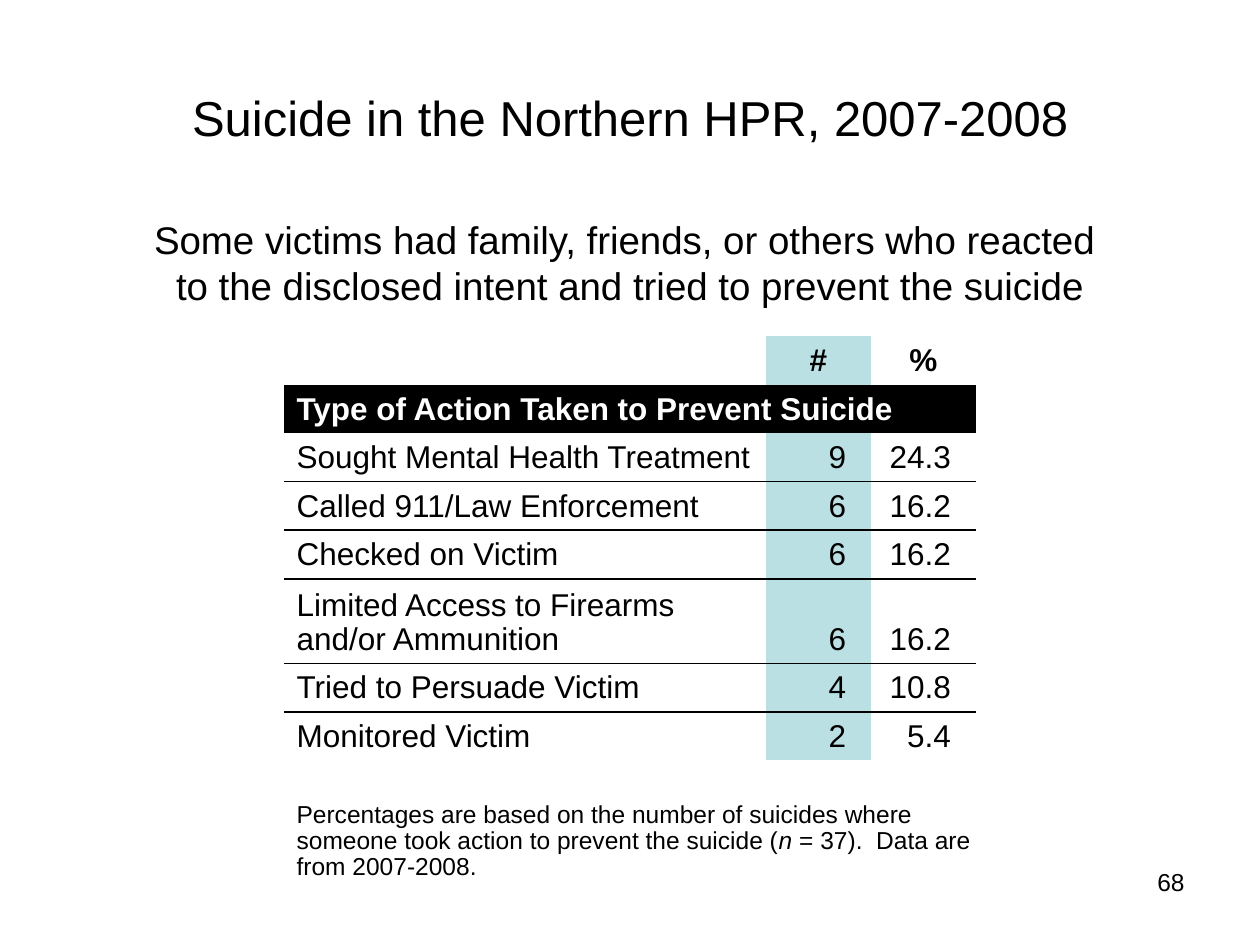
from lxml import etree
from pptx import Presentation
from pptx import util as u
from pptx.dml.color import RGBColor
from pptx.enum import text
from pptx.oxml.ns import qn

PX = 914400 // 126
BLACK, WHITE, TEAL = "000000", "FFFFFF", "BBE0E3"
LEFT, MID, RIGHT = text.PP_ALIGN.LEFT, text.PP_ALIGN.CENTER, text.PP_ALIGN.RIGHT
TOP, CENTER = text.MSO_ANCHOR.TOP, text.MSO_ANCHOR.MIDDLE

# Content: box, size, alignment, anchor, lines
TEXTS = [
    ((63, 38, 1134, 158), 28, MID, CENTER, ["Suicide in the Northern HPR, 2007-2008"]),
    ((105, 210, 1050, 105), 22, MID, TOP,
     ["Some victims had family, friends, or others who reacted ",
      "to the disclosed intent and tried to prevent the suicide"]),
    ((903, 861, 294, 65), 14, RIGHT, TOP, ["68"]),
]
HEADS = ["", "#", "%"]
BAND = "Type of Action Taken to Prevent Suicide"
DATA = [
    ("Sought Mental Health Treatment", "9", "24.3"),
    ("Called 911/Law Enforcement", "6", "16.2"),
    ("Checked on Victim", "6", "16.2"),
    ("Limited Access to Firearms and/or Ammunition", "6", "16.2"),
    ("Tried to Persuade Victim", "4", "10.8"),
    ("Monitored Victim", "2", "5.4"),
]
NOTE = [
    ("Percentages are based on the number of suicides where someone took "
     "action to prevent the suicide (", False),
    ("n ", True),
    ("= 37).  Data are from 2007-2008.", False),
]
COLS = [482, 105, 105]
ROWS = [48, 46, 46, 46, 46, 80, 46, 46, 30, 93]


def px(n):
    return u.Emu(n * PX)


def rgb(hue):
    return RGBColor.from_string(hue)


def add_run(para, words, size, hue=BLACK, bold=False, slant=False):
    run = para.add_run()
    run.text = words
    font = run.font
    font.name, font.size = "Arial", u.Pt(size)
    font.bold, font.italic = bold, slant
    font.color.rgb = rgb(hue)


def add_text(slide, box, size, align, anchor, lines):
    frame = slide.shapes.add_textbox(*map(px, box)).text_frame
    frame.word_wrap = True
    frame.vertical_anchor = anchor
    for i, line in enumerate(lines):
        para = frame.add_paragraph() if i else frame.paragraphs[0]
        para.alignment = align
        add_run(para, line, size)


def set_edges(cell, rules):
    props = cell._tc.get_or_add_tcPr()
    for side in ("lnL", "lnR", "lnT", "lnB"):
        line = etree.SubElement(props, qn("a:" + side), w="12700")
        if side in rules:
            fill = etree.SubElement(line, qn("a:solidFill"))
            etree.SubElement(fill, qn("a:srgbClr"), val=BLACK)
        else:
            etree.SubElement(line, qn("a:noFill"))


def fill_cell(cell, runs, align=LEFT, size=18, hue=BLACK, bold=False):
    cell.vertical_anchor = text.MSO_ANCHOR.BOTTOM
    para = cell.text_frame.paragraphs[0]
    para.alignment, para.line_spacing = align, 0.95
    for words, slant in runs:
        add_run(para, words, size, hue, bold, slant)


def add_grid(slide):
    grid = slide.shapes.add_table(len(ROWS), len(COLS), px(284), px(336),
                                  px(sum(COLS)), px(sum(ROWS))).table
    grid.first_row = grid.horz_banding = False
    for col, wide in zip(grid.columns, COLS):
        col.width = px(wide)
    for row, high in zip(grid.rows, ROWS):
        row.height = px(high)

    # Rules, fills and small type for empty cells
    last = len(DATA) + 1
    for r in range(len(ROWS)):
        for c in range(len(COLS)):
            cell = grid.cell(r, c)
            rules = (["lnT"] if 2 < r <= last else []) + (["lnB"] if 2 <= r < last else [])
            set_edges(cell, rules)
            tint = BLACK if r == 1 else TEAL if c == 1 and r <= last else None
            if tint:
                cell.fill.solid()
                cell.fill.fore_color.rgb = rgb(tint)
            else:
                cell.fill.background()
            cell.text_frame.paragraphs[0]._p.get_or_add_endParaRPr().set("sz", "800")

    # Heads, band and note
    for c, head in enumerate(HEADS):
        if head:
            fill_cell(grid.cell(0, c), [(head, False)], MID, bold=True)
    for r in (1, len(ROWS) - 1):
        grid.cell(r, 0).merge(grid.cell(r, 2))
        grid.cell(r, 0).margin_right = 0
    fill_cell(grid.cell(1, 0), [(BAND, False)], hue=WHITE, bold=True)
    fill_cell(grid.cell(len(ROWS) - 1, 0), NOTE, size=14)

    # Data
    for r, items in enumerate(DATA, 2):
        for c, item in enumerate(items):
            cell = grid.cell(r, c)
            fill_cell(cell, [(item, False)], RIGHT if c else LEFT)
            if c:
                cell.margin_right = px(25)


def main():
    deck = Presentation()
    deck.slide_width, deck.slide_height = px(1260), px(945)
    slide = deck.slides.add_slide(deck.slide_layouts[6])
    for item in TEXTS:
        add_text(slide, *item)
    add_grid(slide)
    deck.save("out.pptx")


if __name__ == "__main__":
    main()
